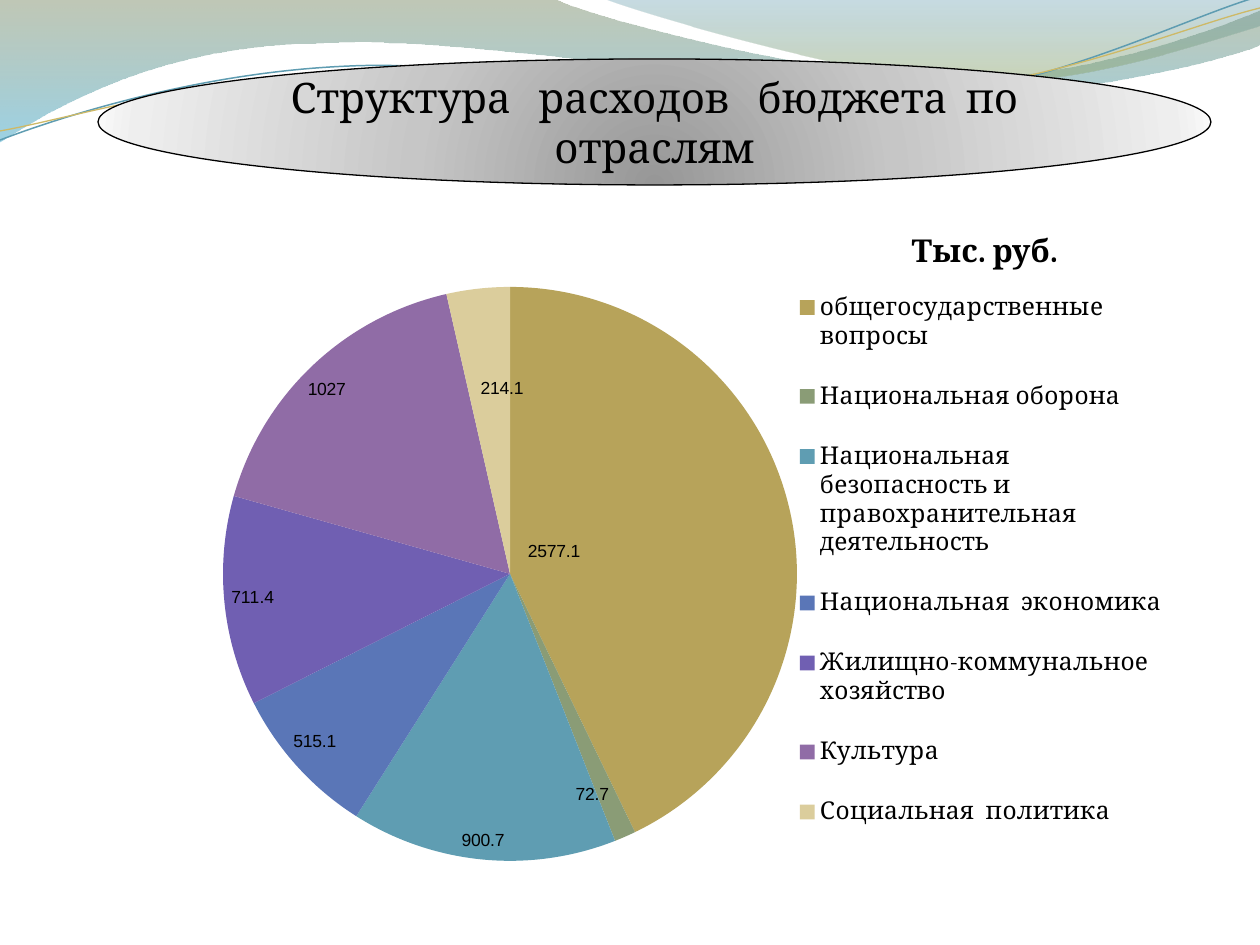
import math
from dataclasses import dataclass

from lxml import etree
from pptx import Presentation
from pptx.chart.data import CategoryChartData
from pptx.dml.color import RGBColor
from pptx.enum import chart as charts, shapes, text
from pptx.oxml import parse_xml
from pptx.oxml.ns import nsdecls, qn
from pptx import util as u

PX = 914400 // 126
FONT = "Cambria"
LABEL_FONT = "Arial"
BLACK = RGBColor(0, 0, 0)
TEAL = RGBColor(0x5E, 0x9C, 0xB1)
GOLD = RGBColor(0xCE, 0xB9, 0x66)
OLIVE = RGBColor(0x74, 0x85, 0x5E)
SKY = RGBColor(0x4A, 0xAC, 0xCE)
SEA = RGBColor(0x45, 0x88, 0x9F)
MOSS = RGBColor(0x8A, 0xA3, 0x6D)
GREYS = [RGBColor(v, v, v) for v in (0x97, 0xC6, 0xEE, 0xF9)]


@dataclass
class Stop:
    at: int
    color: RGBColor
    opacity: int = 100


@dataclass
class Wave:
    start: tuple[int, int]
    steps: list[tuple[int, ...]]  # two numbers: line; six numbers: Bezier curve
    stops: list[Stop] | None = None
    color: RGBColor | None = None
    width: float = 0.75


@dataclass
class Slice:
    name: str
    value: float
    color: RGBColor
    label: tuple[int, int]  # centre of the value label


@dataclass
class Box:
    x: int
    y: int
    w: int
    h: int


WAVES = [
    Wave((0, -1), [(554, -1), (600, 21, 837, 79, 955, 79), (1075, 79, 1207, 33, 1260, 11),
                   (1261, 45), (1239, 55, 1096, 96, 940, 95), (784, 95, 481, 35, 324, 43),
                   (163, 44, 58, 105, -1, 142)],
         stops=[Stop(0, OLIVE, 45), Stop(100, SKY, 55)]),
    Wave((604, -1), [(641, 14, 859, 78, 969, 82), (1079, 87, 1211, 40, 1260, 26), (1260, 0)],
         stops=[Stop(0, SEA, 30), Stop(80, MOSS, 45)]),
    Wave((0, 140), [(60, 117, 199, 72, 349, 66), (498, 59, 747, 112, 898, 101),
                    (1048, 89, 1182, 19, 1257, -3)], color=TEAL, width=0.85),
    Wave((0, 131), [(59, 121, 207, 77, 357, 71), (508, 64, 751, 105, 903, 95),
                    (1053, 84, 1186, 26, 1260, 8)], color=GOLD),
]
SLICES = [
    Slice("общегосударственные вопросы", 2577.1, RGBColor(0xB7, 0xA3, 0x5A), (555, 552)),
    Slice("Национальная оборона", 72.7, RGBColor(0x8A, 0x9C, 0x76), (593, 794)),
    Slice("Национальная  безопасность и правохранительная  деятельность", 900.7,
          RGBColor(0x5F, 0x9D, 0xB2), (482, 840)),
    Slice("Национальная  экономика", 515.1, RGBColor(0x5A, 0x76, 0xB7), (314, 742)),
    Slice("Жилищно-коммунальное  хозяйство", 711.4, RGBColor(0x70, 0x5F, 0xB2), (252, 598)),
    Slice("Культура", 1027, RGBColor(0x90, 0x6C, 0xA6), (326, 390)),
    Slice("Социальная  политика", 214.1, RGBColor(0xDB, 0xCD, 0x9C), (501, 389)),
]
CHART = Box(20, 207, 1152, 689)
PLOT = Box(190, 287, 640, 574)
LEGEND = Box(790, 262, 382, 596)
CHART_TITLE = Box(906, 224, 0, 0)


def set_gradient(shape, stops: list[Stop], direction: str) -> None:
    shape.fill.background()
    marks = "".join(
        f'<a:gs pos="{s.at * 1000}"><a:srgbClr val="{s.color}">'
        f'<a:alpha val="{s.opacity * 1000}"/></a:srgbClr></a:gs>' for s in stops)
    gradient = parse_xml(f'<a:gradFill {nsdecls("a")} rotWithShape="1">'
                         f'<a:gsLst>{marks}</a:gsLst>{direction}</a:gradFill>')
    properties = shape.element.spPr
    properties.replace(properties.find(qn("a:noFill")), gradient)


def bend(shape, steps: list[tuple[int, ...]]) -> None:
    """Join each three line segments of a six-number step into one Bezier curve."""
    outline = shape.element.spPr.find(".//" + qn("a:path"))
    lines = iter(outline.findall(qn("a:lnTo")))
    for step in steps:
        group = [next(lines) for _ in range(len(step) // 2)]
        if len(group) == 3:
            curve = etree.Element(qn("a:cubicBezTo"))
            group[0].addprevious(curve)
            for line in group:
                curve.append(line[0])
                outline.remove(line)


def draw_wave(slide, wave: Wave) -> None:
    builder = slide.shapes.build_freeform(*wave.start, scale=PX)
    builder.add_line_segments(
        [pair for step in wave.steps for pair in zip(step[::2], step[1::2])],
        close=wave.stops is not None)
    shape = builder.convert_to_shape()
    bend(shape, wave.steps)
    shape.shadow.inherit = False
    if wave.stops:
        set_gradient(shape, wave.stops, '<a:lin ang="5400000" scaled="0"/>')
        shape.line.fill.background()
    else:
        shape.fill.background()
        shape.line.color.rgb = wave.color
        shape.line.width = u.Pt(wave.width)


def write(frame, words: str, *, size: int, bold: bool = False, align=text.PP_ALIGN.CENTER) -> None:
    paragraph = frame.paragraphs[0]
    paragraph.alignment = align
    run = paragraph.add_run()
    run.text = words
    style(run.font, size=size, bold=bold)


def style(font, *, size: int, name: str = FONT, bold: bool = False) -> None:
    font.name, font.size, font.bold = name, u.Pt(size), bold
    font.color.rgb = BLACK


def draw_heading(slide, box: Box, words: str) -> None:
    oval = slide.shapes.add_shape(shapes.MSO_SHAPE.OVAL, *(v * PX for v in (box.x, box.y, box.w, box.h)))
    oval.shadow.inherit = False
    set_gradient(oval, [Stop(at, grey) for at, grey in zip((0, 43, 93, 100), GREYS)],
                 '<a:path path="circle"><a:fillToRect l="50000" t="130000" r="50000" b="-30000"/></a:path>')
    oval.line.color.rgb = BLACK
    oval.line.width = u.Pt(0.75)
    oval.text_frame.word_wrap = True
    oval.text_frame.vertical_anchor = text.MSO_ANCHOR.MIDDLE
    write(oval.text_frame, words, size=24)


def set_layout(parent, index: int, **values) -> None:
    for old in parent.findall(qn("c:layout")):
        parent.remove(old)
    layout = etree.Element(qn("c:layout"))
    manual = etree.SubElement(layout, qn("c:manualLayout"))
    for tag, value in values.items():
        etree.SubElement(manual, qn(f"c:{tag}")).set(
            "val", value if isinstance(value, str) else f"{value:.4f}")
    parent.insert(index, layout)


def place(parent, index: int, box: Box, **target) -> None:
    size = {"w": box.w / CHART.w, "h": box.h / CHART.h} if box.w else {}
    set_layout(parent, index, **target, xMode="edge", yMode="edge",
               x=(box.x - CHART.x) / CHART.w, y=(box.y - CHART.y) / CHART.h, **size)


def label_offset(part: Slice, angle: float) -> dict[str, float]:
    """Shift from the default place outside the slice, as a share of the chart."""
    radius = PLOT.h / 2 + 7
    dx, dy = math.sin(angle), -math.cos(angle)
    width = sum(5 if mark == "." else 10 for mark in str(part.value))
    x = PLOT.x + PLOT.w / 2 + radius * dx + math.copysign(width / 2, dx)
    y = PLOT.y + PLOT.h / 2 + radius * dy + math.copysign(10, dy)
    return {"x": (part.label[0] - x) / CHART.w, "y": (part.label[1] - y) / CHART.h}


def draw_pie(slide, title: str) -> None:
    data = CategoryChartData()
    data.categories = [part.name for part in SLICES]
    data.add_series("Series 1", [part.value for part in SLICES])
    pie = slide.shapes.add_chart(charts.XL_CHART_TYPE.PIE,
                                 *(v * PX for v in (CHART.x, CHART.y, CHART.w, CHART.h)), data).chart
    style(pie.font, size=18)
    place(pie.plots[0]._element.getparent(), 0, PLOT, layoutTarget="inner")

    # Title and legend
    pie.has_title = True
    write(pie.chart_title.text_frame, title, size=18, bold=True)
    place(pie.chart_title._element, 1, CHART_TITLE)
    pie.has_legend = True
    pie.legend.position = charts.XL_LEGEND_POSITION.RIGHT
    pie.legend.include_in_layout = False
    style(pie.legend.font, size=14)
    place(pie.legend._element, 1, LEGEND)

    # Slices and their values
    series = pie.plots[0].series[0]
    total, before = sum(part.value for part in SLICES), 0
    for i, part in enumerate(SLICES):
        point = series.points[i]
        point.format.fill.solid()
        point.format.fill.fore_color.rgb = part.color
        point.format.line.fill.background()
        style(point.data_label.font, size=10, name=LABEL_FONT)
        label = series._element.findall(".//" + qn("c:dLbl"))[i]
        set_layout(label, 1, **label_offset(part, math.tau * (before + part.value / 2) / total))
        before += part.value
    for leaders in series._element.iter(qn("c:showLeaderLines")):
        leaders.set("val", "0")


def main() -> None:
    deck = Presentation()
    deck.slide_width, deck.slide_height = u.Inches(10), u.Inches(7.5)
    slide = deck.slides.add_slide(deck.slide_layouts[6])
    for wave in WAVES:
        draw_wave(slide, wave)
    draw_heading(slide, Box(98, 59, 1113, 126), "Структура   расходов   бюджета  по отраслям")
    draw_pie(slide, "Тыс. руб.")
    deck.save("out.pptx")


if __name__ == "__main__":
    main()
